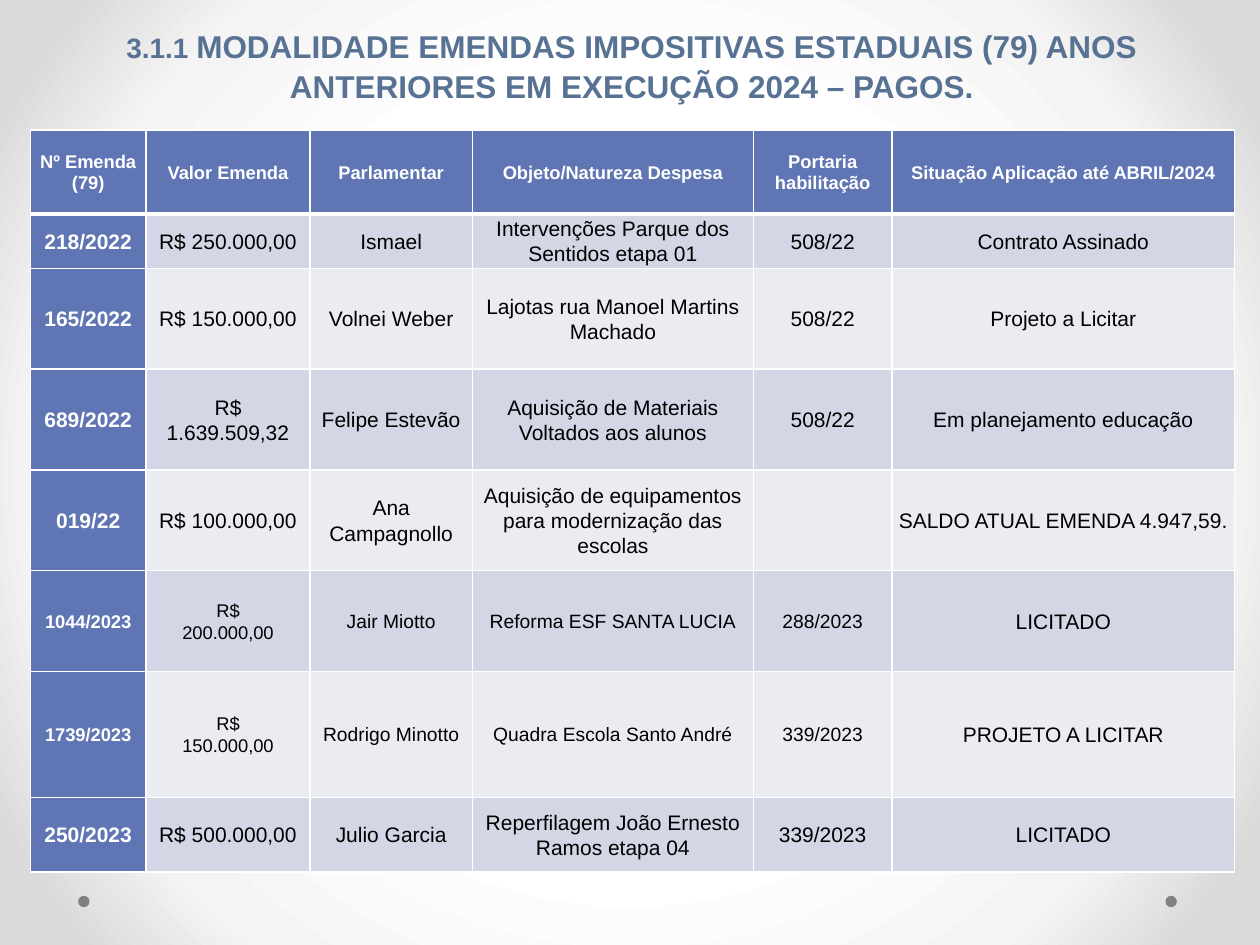
from lxml import etree
from pptx import Presentation
from pptx.dml.color import RGBColor
from pptx.enum.shapes import MSO_SHAPE
from pptx.enum.text import MSO_ANCHOR, MSO_AUTO_SIZE, PP_ALIGN
from pptx.oxml.ns import qn
from pptx.util import Emu, Pt

PX = 9144
OVAL = MSO_SHAPE.OVAL
CENTER = PP_ALIGN.CENTER
MIDDLE = MSO_ANCHOR.MIDDLE
NO_FIT = MSO_AUTO_SIZE.NONE
WHITE, BLACK, BLUE, SLATE, GRAY = "FFFFFF", "000000", "6076B4", "577293", "808080"
BANDS = ["D2D6E5", "EAECF2"]
STOPS = [(50, "FFFFFF"), (76, "F4F4F4"), (92, "DADADA")]

TITLE = [
    ("3.1.1 ", 16),
    ("MODALIDADE EMENDAS IMPOSITIVAS ESTADUAIS (79) ANOS ANTERIORES EM EXECUÇÃO 2024 – PAGOS.", 18),
]
COLS = [92, 130, 129, 223, 110, 272]
HEIGHTS = [67, 43, 80, 80, 80, 80, 100, 59]
HEAD_SIZES = [10.5] * 6
BODY_SIZES = [12] * 6
SMALL_SIZES = [10.5, 10.5, 11, 11, 11, 12]
SIZES = [HEAD_SIZES] + [BODY_SIZES] * 4 + [SMALL_SIZES] * 2 + [BODY_SIZES]
ROWS = [
    ["Nº Emenda (79)", "Valor Emenda", "Parlamentar", "Objeto/Natureza Despesa",
     "Portaria habilitação", "Situação Aplicação até ABRIL/2024"],
    ["218/2022", "R$ 250.000,00", "Ismael", "Intervenções Parque dos Sentidos etapa 01",
     "508/22", "Contrato Assinado"],
    ["165/2022", "R$ 150.000,00", "Volnei Weber", "Lajotas rua Manoel Martins Machado",
     "508/22", "Projeto a Licitar"],
    ["689/2022", "R$ 1.639.509,32", "Felipe Estevão", "Aquisição de Materiais Voltados aos alunos",
     "508/22", "Em planejamento educação"],
    ["019/22", "R$ 100.000,00", "Ana Campagnollo",
     "Aquisição de equipamentos para modernização das escolas", "", "SALDO ATUAL EMENDA 4.947,59."],
    ["1044/2023", "R$\v200.000,00", "Jair Miotto", "Reforma ESF SANTA LUCIA", "288/2023", "LICITADO"],
    ["1739/2023", "R$\v150.000,00", "Rodrigo Minotto", "Quadra Escola Santo André",
     "339/2023", "PROJETO A LICITAR"],
    ["250/2023", "R$ 500.000,00", "Julio Garcia", "Reperfilagem João Ernesto Ramos etapa 04",
     "339/2023", "LICITADO"],
]


def px(n):
    return Emu(n * PX)


def rgb(color):
    return RGBColor.from_string(color)


def set_attrs(obj, **values):
    for name, value in values.items():
        setattr(obj, name, value)


def format_font(font, size, color, bold):
    set_attrs(font, name="Arial", size=Pt(size), bold=bold)
    font.color.rgb = rgb(color)


def add_solid(parent, color):
    fill = etree.SubElement(parent, qn("a:solidFill"))
    etree.SubElement(fill, qn("a:srgbClr"), val=color)


def fill_background(s):
    s.background.fill.solid()
    bg = s.element.find(".//" + qn("p:bgPr"))
    grad = etree.Element(qn("a:gradFill"), rotWithShape="1")
    stops = etree.SubElement(grad, qn("a:gsLst"))
    for pos, color in STOPS:
        stop = etree.SubElement(stops, qn("a:gs"), pos=str(pos * 1000))
        etree.SubElement(stop, qn("a:srgbClr"), val=color)
    path = etree.SubElement(grad, qn("a:path"), path="circle")
    etree.SubElement(path, qn("a:fillToRect"), l="50000", t="50000", r="50000", b="50000")
    bg.replace(bg.find(qn("a:solidFill")), grad)


def add_title(s, x, y, w, h):
    sp = s.shapes.title
    set_attrs(sp, left=px(x), top=px(y), width=px(w), height=px(h))
    tf = sp.text_frame
    set_attrs(tf, word_wrap=True, auto_size=NO_FIT, vertical_anchor=MIDDLE,
              margin_top=0, margin_bottom=0)
    p = tf.paragraphs[0]
    set_attrs(p, alignment=CENTER, line_spacing=1.05)
    for text, size in TITLE:
        r = p.add_run()
        r.text = text
        format_font(r.font, size, SLATE, True)


def set_borders(cell, widths):
    tc_pr = cell._tc.get_or_add_tcPr()
    for i, (side, width) in enumerate(widths.items()):
        ln = etree.Element(qn("a:ln" + side), w=str(Pt(width)))
        add_solid(ln, WHITE)
        tc_pr.insert(i, ln)


def format_cell(cell, text, size, row, col):
    key = row == 0 or col == 0
    set_attrs(cell, text=text, vertical_anchor=MIDDLE, margin_left=px(4),
              margin_right=px(4), margin_top=0, margin_bottom=0)
    cell.fill.solid()
    cell.fill.fore_color.rgb = rgb(BLUE if key else BANDS[(row - 1) % 2])
    set_borders(cell, {"L": 1, "R": 1, "T": 3 if row == 1 else 1, "B": 3 if row == 0 else 1})
    p = cell.text_frame.paragraphs[0]
    set_attrs(p, alignment=CENTER, line_spacing=1.07)
    format_font(p.font, size, WHITE if key else BLACK, key)
    for r in p.runs:
        format_font(r.font, size, WHITE if key else BLACK, key)
    if "\v" in text:
        p._p.get_or_add_pPr().set("indent", str(px(-36)))


def add_amendments(s, x, y):
    frame = s.shapes.add_table(len(ROWS), len(COLS), px(x), px(y), px(sum(COLS)), px(sum(HEIGHTS)))
    table = frame.table
    for column, width in zip(table.columns, COLS):
        column.width = px(width)
    for i, (texts, sizes, height) in enumerate(zip(ROWS, SIZES, HEIGHTS)):
        table.rows[i].height = px(height)
        for j, (text, size) in enumerate(zip(texts, sizes)):
            format_cell(table.cell(i, j), text, size, i, j)


def add_dots(s, x, y, gap, size):
    for left in (x, x + gap):
        sp = s.shapes.add_shape(OVAL, px(left), px(y), px(size), px(size))
        sp.shadow.inherit = False
        sp.fill.solid()
        sp.fill.fore_color.rgb = rgb(GRAY)
        sp.line.fill.background()


def main():
    prs = Presentation()
    set_attrs(prs, slide_width=px(1000), slide_height=px(750))
    s = prs.slides.add_slide(prs.slide_layouts[5])
    fill_background(s)
    add_dots(s, 62, 711, 863, 9)
    add_title(s, 59, 20, 885, 63)
    add_amendments(s, 24, 103)
    prs.save("out.pptx")


if __name__ == "__main__":
    main()
